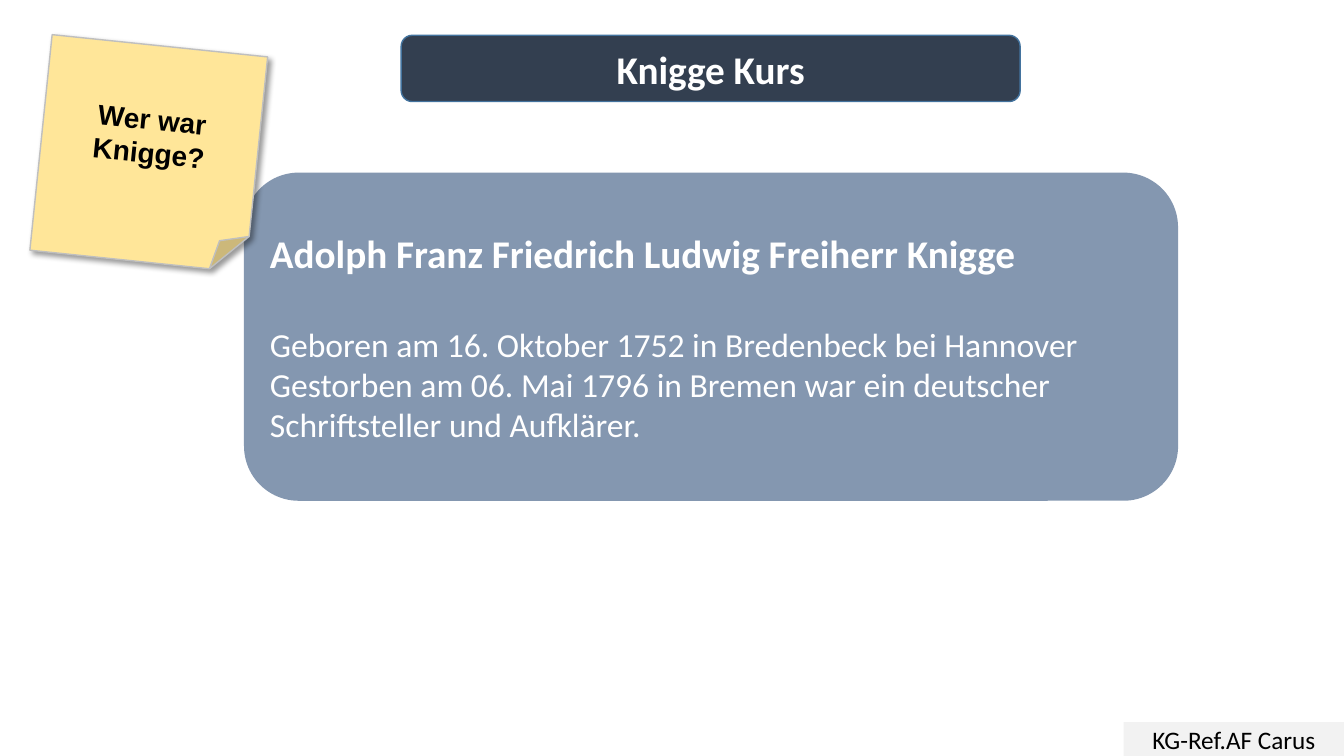
from lxml import etree
from pptx import Presentation
from pptx.dml.color import RGBColor
from pptx.enum.shapes import MSO_SHAPE
from pptx.enum.text import MSO_ANCHOR, PP_ALIGN
from pptx.oxml import parse_xml
from pptx.oxml.ns import nsdecls
from pptx.util import Cm, Pt

RECT, ROUNDED, NOTE = MSO_SHAPE.RECTANGLE, MSO_SHAPE.ROUNDED_RECTANGLE, MSO_SHAPE.FOLDED_CORNER
LEFT, CENTER, MIDDLE = PP_ALIGN.LEFT, PP_ALIGN.CENTER, MSO_ANCHOR.MIDDLE

BLACK = RGBColor(0x00, 0x00, 0x00)
WHITE = RGBColor(0xFF, 0xFF, 0xFF)
LIGHT_GREY = RGBColor(0xF2, 0xF2, 0xF2)
GREY = RGBColor(0xBF, 0xBF, 0xBF)
SLATE = RGBColor(0x84, 0x97, 0xB0)
NAVY = RGBColor(0x33, 0x3F, 0x50)
BLUE = RGBColor(0x43, 0x73, 0x9E)
YELLOW = RGBColor(0xFF, 0xE6, 0x99)

SHADOW = (
    f'<a:effectLst {nsdecls("a")}>'
    '<a:outerShdw blurRad="50800" dist="38100" dir="2700000" algn="tl" rotWithShape="0">'
    '<a:srgbClr val="000000"><a:alpha val="40000"/></a:srgbClr>'
    '</a:outerShdw></a:effectLst>'
)


def add_box(kind, box, fill, line=None):
    sp = s.shapes.add_shape(kind, *map(Cm, box))
    sp.shadow.inherit = False
    sp.fill.solid()
    sp.fill.fore_color.rgb = fill
    if line is None:
        sp.line.fill.background()
    else:
        sp.line.color.rgb = line
        sp.line.width = Pt(1)
    return sp


def write(sp, lines, color, align=CENTER, font="Calibri"):
    """Fill a shape with paragraphs given as (text, size, bold, space after)."""
    tf = sp.text_frame
    tf.word_wrap = True
    tf.vertical_anchor = MIDDLE
    for i, (text, size, bold, gap) in enumerate(lines):
        p = tf.paragraphs[0] if i == 0 else tf.add_paragraph()
        p.alignment = align
        p.space_after = Pt(gap)
        r = p.add_run()
        r.text = text
        for name, value in {"name": font, "size": Pt(size), "bold": bold}.items():
            setattr(r.font, name, value)
        r.font.color.rgb = color


prs = Presentation()
prs.slide_width, prs.slide_height = Cm(33.87), Cm(19.05)
s = prs.slides.add_slide(prs.slide_layouts[5])

footer = add_box(RECT, (28.32, 18.2, 5.55, 0.85), LIGHT_GREY)
write(footer, [("KG-Ref.AF Carus", 18, False, 0)], BLACK)

biography = add_box(ROUNDED, (6.15, 4.35, 23.54, 8.27), SLATE)
write(biography, [
    ("Adolph Franz Friedrich Ludwig Freiherr Knigge", 28, True, 34),
    ("Geboren am 16. Oktober 1752 in Bredenbeck bei Hannover", 24, False, 0),
    ("Gestorben am 06. Mai 1796 in Bremen war ein deutscher Schriftsteller und Aufklärer.",
     24, False, 0),
], WHITE, LEFT)

note = add_box(NOTE, (1.02, 1.14, 5.46, 5.46), YELLOW, GREY)
note.rotation = 5.9
sp_pr = note._element.spPr
sp_pr.replace(sp_pr.find("{*}effectLst"), parse_xml(SHADOW))
write(note, [("Wer war Knigge?", 20, True, 0)], BLACK, font="Arial")

banner = add_box(ROUNDED, (10.11, 0.89, 15.6, 1.67), NAVY, BLUE)

title = s.shapes.title
title.left, title.top, title.width, title.height = banner.left, banner.top, banner.width, banner.height
write(title, [("Knigge Kurs", 28, True, 0)], WHITE)
s.shapes._spTree.append(title._element)

etree.cleanup_namespaces(sp_pr)
prs.save("out.pptx")
